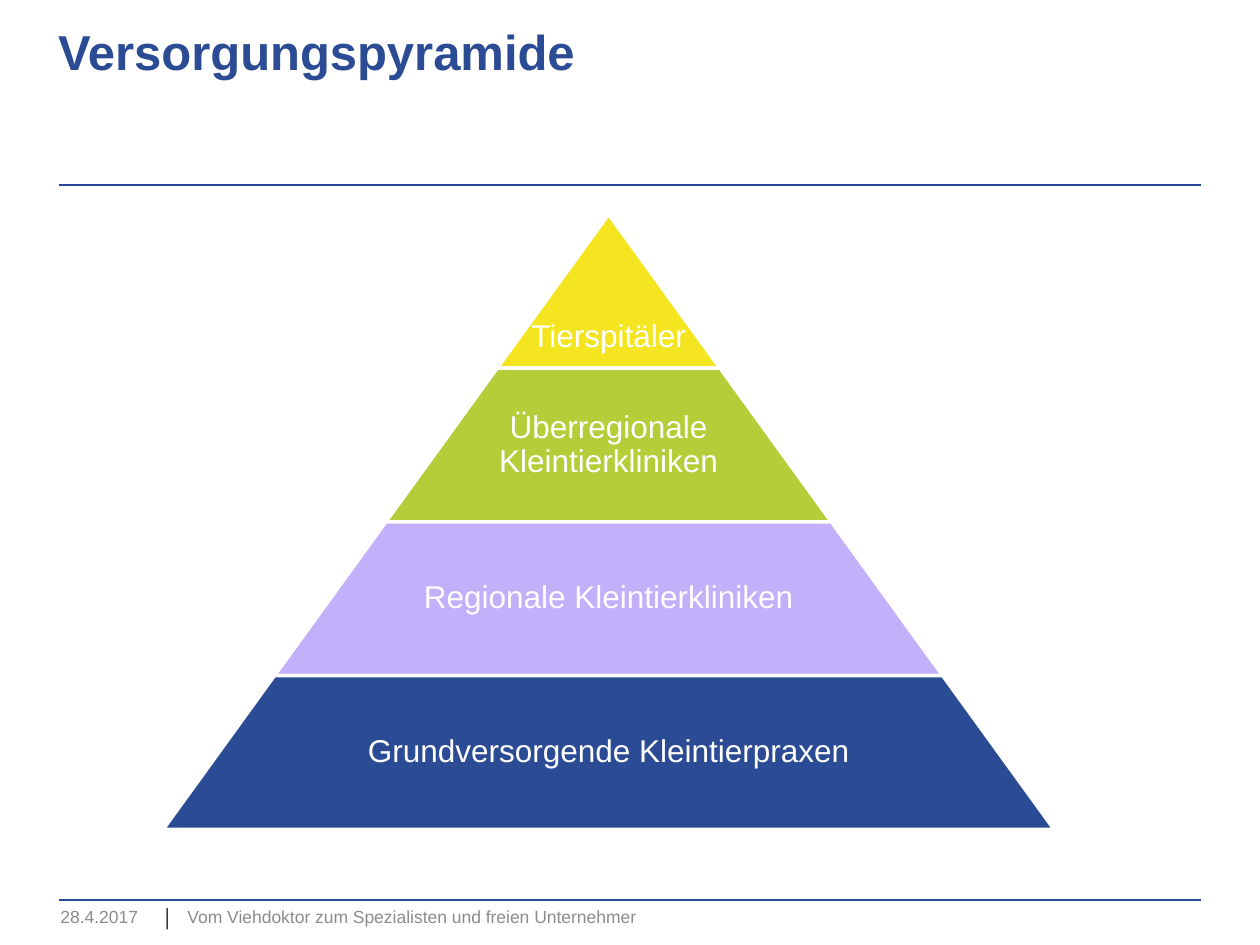
from lxml import etree
from pptx import Presentation
from pptx.dml.color import RGBColor
from pptx.enum import shapes, text
from pptx.oxml.ns import qn
from pptx.util import Cm, Pt

COLORS = {
    "title": "2B4C95", "rule": "274994", "gray": "8C8C8C", "black": "000000",
    "white": "FFFFFF", "yellow": "F5E420", "green": "B3CE38",
    "lilac": "C2B1FA", "blue": "2B4C95",
}
TITLE = "Versorgungspyramide"
# label, fill, label width in cm; top to bottom
TIERS = [
    ("Tierspitäler", "yellow", 4.49),
    ("Überregionale Kleintierkliniken", "green", 5.82),
    ("Regionale Kleintierkliniken", "lilac", 8.74),
    ("Grundversorgende Kleintierpraxen", "blue", 11.66),
]
# text, colour, left, top, width, height in cm
FOOTER = [
    ("│", "black", 3.28, 18.29, 0.2, 0.43),
    ("28.4.2017", "gray", 1.22, 18.24, 2.01, 0.48),
    ("Vom Viehdoktor zum Spezialisten und freien Unternehmer",
     "gray", 3.78, 18.24, 15.01, 0.48),
]
RULES = [3.73, 18.14]
MID, TOP, HIGH, STEP = 12.27, 4.32, 3.1, 4.49


def color(name):
    return RGBColor.from_string(COLORS[name])


def write(shape, words, size, tint, align, anchor, pad=0.0, bold=False):
    frame = shape.text_frame
    frame.text = words
    frame.word_wrap = True
    frame.auto_size = text.MSO_AUTO_SIZE.NONE
    frame.vertical_anchor = anchor
    frame.margin_left = frame.margin_right = Cm(pad)
    frame.margin_top = frame.margin_bottom = Cm(pad)
    para = frame.paragraphs[0]
    para.alignment = align
    font = para.runs[0].font
    font.name, font.size, font.bold = "Arial", Pt(size), bold
    font.color.rgb = color(tint)
    return frame


deck = Presentation()
deck.slide_width, deck.slide_height = Cm(25.4), Cm(19.05)
slide = deck.slides.add_slide(deck.slide_layouts[5])
items = slide.shapes
LEFT, CENTER = text.PP_ALIGN.LEFT, text.PP_ALIGN.CENTER
HEAD, MIDDLE, FOOT = (text.MSO_ANCHOR.TOP, text.MSO_ANCHOR.MIDDLE,
                      text.MSO_ANCHOR.BOTTOM)

# Title
title = items.title
title.left, title.top, title.width, title.height = map(
    Cm, (1.17, 0.43, 19.53, 2.36))
write(title, TITLE, 28, "title", LEFT, HEAD, bold=True)

# Rules above and below the content
for y in RULES:
    rule = items.add_connector(
        shapes.MSO_CONNECTOR.STRAIGHT, Cm(1.19), Cm(y), Cm(24.21), Cm(y))
    rule.line.color.rgb = color("rule")
    rule.line.width = Pt(0.75)
    etree.SubElement(rule._element.spPr, qn("a:effectLst"))

# Footer
for words, tint, *place in FOOTER:
    box = items.add_textbox(*map(Cm, place))
    frame = write(box, words, 10, tint, LEFT, MIDDLE)
    frame.word_wrap = len(words) > 1

# Pyramid: each tier is one step wider than the one above
for row, (words, fill, span) in enumerate(TIERS):
    wide, y = STEP * (row + 1), TOP + HIGH * row
    tier = items.add_shape(
        shapes.MSO_SHAPE.TRAPEZOID,
        Cm(MID - wide / 2), Cm(y), Cm(wide), Cm(HIGH))
    tier.adjustments[0] = STEP / 2 / HIGH
    tier.shadow.inherit = False
    tier.fill.solid()
    tier.fill.fore_color.rgb = color(fill)
    tier.line.color.rgb = color("white")
    tier.line.width = Pt(2)

    label = items.add_textbox(Cm(MID - span / 2), Cm(y), Cm(span), Cm(HIGH))
    frame = write(label, words, 18, "white", CENTER,
                  MIDDLE if row else FOOT, pad=0.08)
    frame.paragraphs[0].line_spacing = 0.9
    if row == 0:
        frame.margin_bottom = Cm(0.28)  # keeps the label in the wide part

deck.save("out.pptx")
